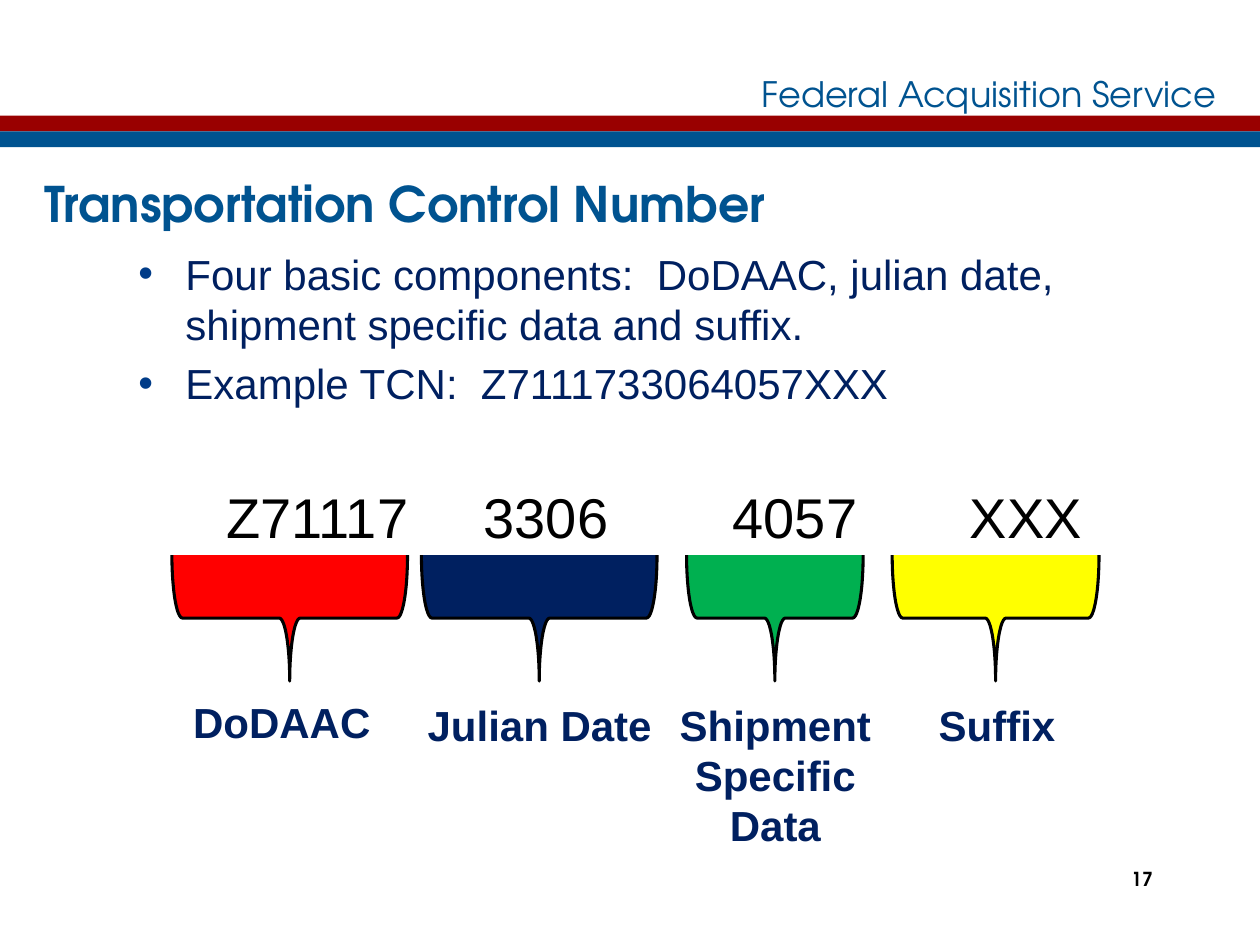
from dataclasses import dataclass

from lxml import etree
from pptx import Presentation
from pptx.dml.color import RGBColor
from pptx.enum.shapes import MSO_SHAPE
from pptx.enum.text import MSO_ANCHOR, PP_ALIGN
from pptx.oxml.ns import qn
from pptx.util import Cm, Pt

RECTANGLE = MSO_SHAPE.RECTANGLE
BRACE = MSO_SHAPE.RIGHT_BRACE
MIDDLE = MSO_ANCHOR.MIDDLE
LEFT, CENTER, RIGHT = PP_ALIGN.LEFT, PP_ALIGN.CENTER, PP_ALIGN.RIGHT


@dataclass(frozen=True)
class Theme:
    blue: str = "005390"
    dark_red: str = "990000"
    navy: str = "002060"
    bullet: str = "013C88"
    red: str = "FF0000"
    green: str = "00B050"
    yellow: str = "FFFF00"
    black: str = "000000"
    heading_font: str = "TeX Gyre Adventor"
    body_font: str = "Arial"
    header_size: int = 20
    title_size: int = 28
    body_size: int = 24
    code_size: int = 32
    number_size: int = 11


theme = Theme()
heading = {"name": theme.heading_font, "bold": False}
body = {"name": theme.body_font, "size": Pt(theme.body_size), "bold": False}


def add_text(place, lines, style, color, align=LEFT):
    """Add a text box at place (left, top, width, height in cm), one paragraph a line."""
    box = page.shapes.add_textbox(*(Cm(length) for length in place))
    frame = box.text_frame
    frame.word_wrap = True
    for index, line in enumerate(lines):
        para = frame.paragraphs[0] if index == 0 else frame.add_paragraph()
        para.alignment = align
        span = para.add_run()
        span.text = line
        for name, value in style.items():
            setattr(span.font, name, value)
        span.font.color.rgb = RGBColor.from_string(color)
    return frame


def add_filled(kind, place, color):
    shape = page.shapes.add_shape(kind, *(Cm(length) for length in place))
    shape.shadow.inherit = False
    shape.fill.solid()
    shape.fill.fore_color.rgb = RGBColor.from_string(color)
    shape.line.fill.background()
    return shape


deck = Presentation()
deck.slide_width, deck.slide_height = Cm(25.4), Cm(19.05)
page = deck.slides.add_slide(deck.slide_layouts[6])

# Header
header = add_text((13.97, 1.4, 10.8, 0.97), ["Federal Acquisition Service"],
                  heading | {"size": Pt(theme.header_size)}, theme.blue, RIGHT)
header.word_wrap = False
header.vertical_anchor = MIDDLE
for top, color in ((2.33, theme.dark_red), (2.65, theme.blue)):
    add_filled(RECTANGLE, (0, top, 25.4, 0.32), color)

add_text((0.64, 3.38, 23.93, 1.45), ["Transportation Control Number"],
         heading | {"size": Pt(theme.title_size), "bold": True}, theme.blue)
add_text((18.21, 17.35, 5.28, 1.27), ["17"],
         heading | {"size": Pt(theme.number_size), "bold": True}, theme.black, RIGHT)

# Bullets
points = add_text((1.27, 4.88, 23.29, 4.24), [
    "Four basic components:  DoDAAC, julian date, shipment specific data and suffix.",
    "Example TCN:  Z7111733064057XXX",
], body, theme.navy)
for para in points.paragraphs:
    properties = para._p.get_or_add_pPr()
    properties.set("marL", str(Cm(2.22)))
    properties.set("indent", str(Cm(-0.95)))
    bullet_color = etree.SubElement(properties, qn("a:buClr"))
    etree.SubElement(bullet_color, qn("a:srgbClr"), val=theme.bullet)
    etree.SubElement(properties, qn("a:buFont"), typeface=theme.body_font)
    etree.SubElement(properties, qn("a:buChar"), char="•")
points.paragraphs[1].space_before = Pt(4.8)

# Parts of the number: code, tab stop, brace centre, brace length, fill,
# label lines, label centre, label top, label width
parts = [
    ("Z71117", 3.1, 5.84, 4.75, theme.red, ["DoDAAC"], 5.68, 13.92, 5.05),
    ("3306", 8.28, 10.87, 4.75, theme.navy, ["Julian Date"], 10.88, 13.97, 6.83),
    ("4057", 13.3, 15.62, 3.56, theme.green, ["Shipment Specific", "Data"],
     15.63, 13.97, 5.05),
    ("XXX", 18.08, 20.07, 4.17, theme.yellow, ["Suffix"], 20.1, 13.97, 5.05),
]
brace_depth, brace_middle = 2.54, 12.46

for _, _, center, length, color, label, label_center, label_top, label_width in parts:
    brace = add_filled(BRACE, (center - brace_depth / 2, brace_middle - length / 2,
                               brace_depth, length), color)
    brace.rotation = 90
    brace.line.color.rgb = RGBColor.from_string(theme.black)
    brace.line.width = Pt(1.75)
    add_text((label_center - label_width / 2, label_top, label_width, 1.27 * len(label)),
             label, body | {"bold": True}, theme.navy, CENTER)

codes = add_text((1.22, 9.6, 21.21, 1.63), ["".join("\t" + part[0] for part in parts)],
                 body | {"size": Pt(theme.code_size)}, theme.black)
properties = codes.paragraphs[0]._p.get_or_add_pPr()
tab_list = etree.SubElement(properties, qn("a:tabLst"))
for part in parts:
    etree.SubElement(tab_list, qn("a:tab"), pos=str(Cm(part[1])), algn="l")

deck.save("out.pptx")
